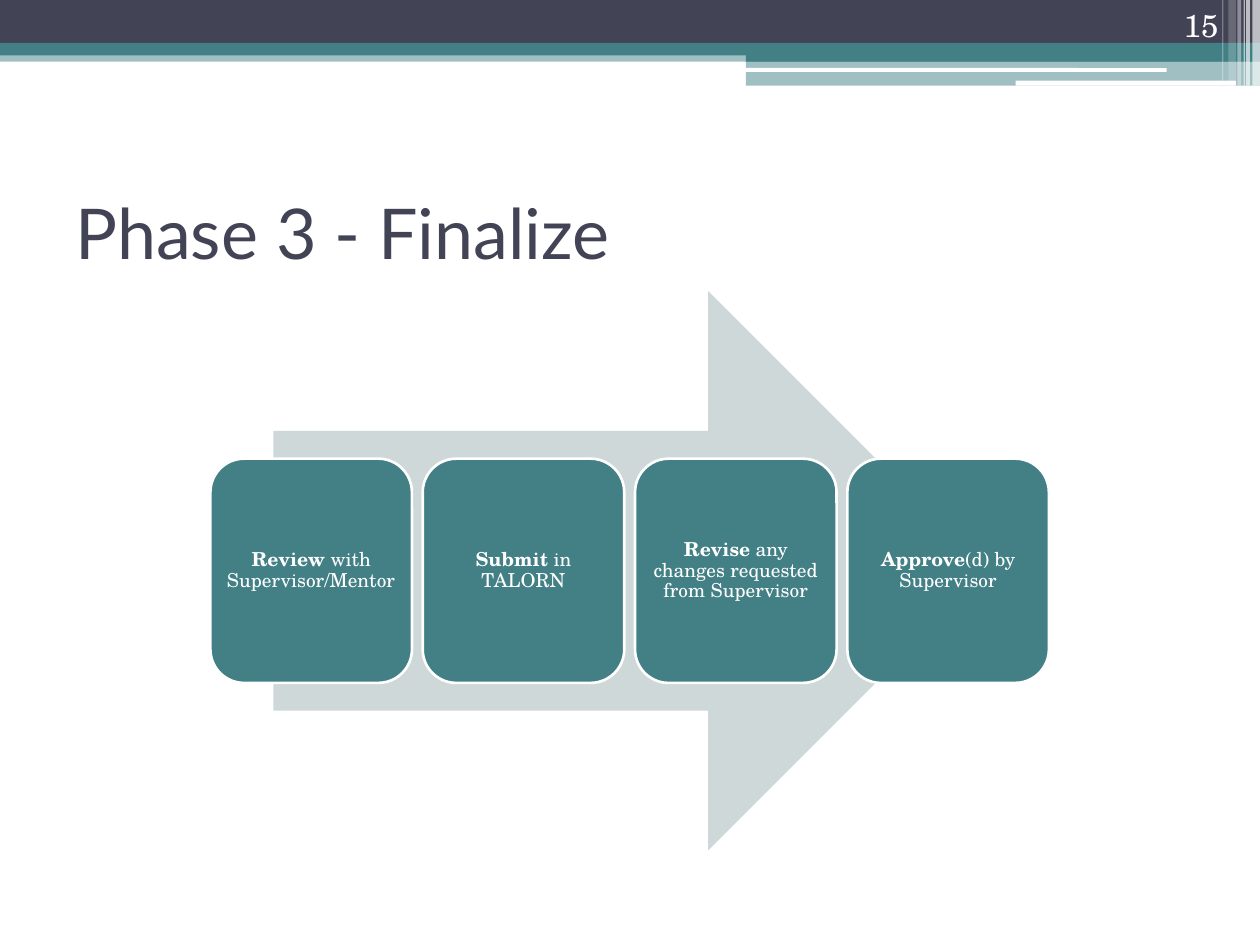
from lxml import etree
from pptx import Presentation
from pptx.dml.color import RGBColor
from pptx.enum import shapes, text
from pptx.oxml.ns import qn
from pptx.util import Inches, Pt

NAVY, TEAL, PALE, WHITE = "424456", "438086", "CFD8D9", "FFFFFF"
SERIF = "TeX Gyre Schola"
KIND = shapes.MSO_SHAPE


def color(value):
    return RGBColor.from_string(value)


def add_block(kind, left, top, width, height, fill, opacity=100):
    block = page.shapes.add_shape(
        kind, Inches(left), Inches(top), Inches(width), Inches(height))
    block.shadow.inherit = False
    block.fill.solid()
    block.fill.fore_color.rgb = color(fill)
    block.line.fill.background()
    if opacity < 100:
        tint = block.fill._xPr.find(".//" + qn("a:srgbClr"))
        etree.SubElement(tint, qn("a:alpha"), val=str(opacity * 1000))
    return block


deck = Presentation()
deck.slide_width, deck.slide_height = Inches(10), Inches(7.5)
page = deck.slides.add_slide(deck.slide_layouts[6])

# Header bands
for left, top, width, height, fill, opacity in [
    (0, 0.4, 10, 0.09, TEAL, 50),
    (0, 0, 10, 0.34, NAVY, 100),
    (0, 0.34, 10, 0.1, TEAL, 100),
    (5.92, 0.39, 4.08, 0.1, TEAL, 100),
    (5.92, 0.48, 4.08, 0.2, TEAL, 50),
]:
    add_block(KIND.RECTANGLE, left, top, width, height, fill, opacity)

# White bars below the header
for left, top, width, height in [(5.91, 0.54, 3.35, 0.03), (8.06, 0.64, 1.75, 0.04)]:
    add_block(KIND.ROUNDED_RECTANGLE, left, top, width, height, WHITE)

# Translucent stripes at the right edge
for left, width, height, opacity in [
    (9.94, 0.06, 0.68, 65),
    (9.89, 0.03, 0.68, 65),
    (9.87, 0.01, 0.68, 60),
    (9.82, 0.03, 0.68, 40),
    (9.75, 0.06, 0.64, 20),
    (9.7, 0.01, 0.64, 30),
]:
    add_block(KIND.RECTANGLE, left, 0, width, height, WHITE, opacity)

# Title and slide number
for words, left, top, width, height, anchor, align, size, font, ink in [
    ("Phase 3 - Finalize", 0.5, 1.25, 9, 1.17,
     text.MSO_ANCHOR.MIDDLE, text.PP_ALIGN.LEFT, 40, "Lato", NAVY),
    ("15", 8.94, 0, 0.83, 0.4,
     text.MSO_ANCHOR.BOTTOM, text.PP_ALIGN.RIGHT, 18, SERIF, WHITE),
]:
    box = page.shapes.add_textbox(
        Inches(left), Inches(top), Inches(width), Inches(height))
    box.text_frame.word_wrap = True
    box.text_frame.vertical_anchor = anchor
    para = box.text_frame.paragraphs[0]
    para.text = words
    para.alignment = align
    para.font.size = Pt(size)
    para.font.name = font
    para.font.color.rgb = color(ink)

# Process arrow with its four steps
add_block(KIND.RIGHT_ARROW, 2.17, 2.31, 5.67, 4.44, PALE)
steps = [
    ("Review", " with Supervisor/Mentor"),
    ("Submit", " in TALORN"),
    ("Revise", " any changes requested from Supervisor"),
    ("Approve", "(d) by Supervisor"),
]
first_left, pitch = 1.67, 1.685
for index, (action, detail) in enumerate(steps):
    step = add_block(KIND.ROUNDED_RECTANGLE, first_left + index * pitch, 3.64,
                     1.6, 1.78, TEAL)
    step.line.color.rgb = color(WHITE)
    step.line.width = Pt(1.5)
    frame = step.text_frame
    frame.word_wrap = True
    frame.vertical_anchor = text.MSO_ANCHOR.MIDDLE
    frame.margin_left = frame.margin_right = Inches(0.05)
    frame.margin_top = frame.margin_bottom = Inches(0.05)
    para = frame.paragraphs[0]
    para.alignment = text.PP_ALIGN.CENTER
    para.line_spacing = 0.9
    para.font.size = Pt(11)
    para.font.name = SERIF
    para.font.color.rgb = color(WHITE)
    for words, bold in [(action, True), (detail, False)]:
        span = para.add_run()
        span.text = words
        span.font.bold = bold

deck.save("out.pptx")
